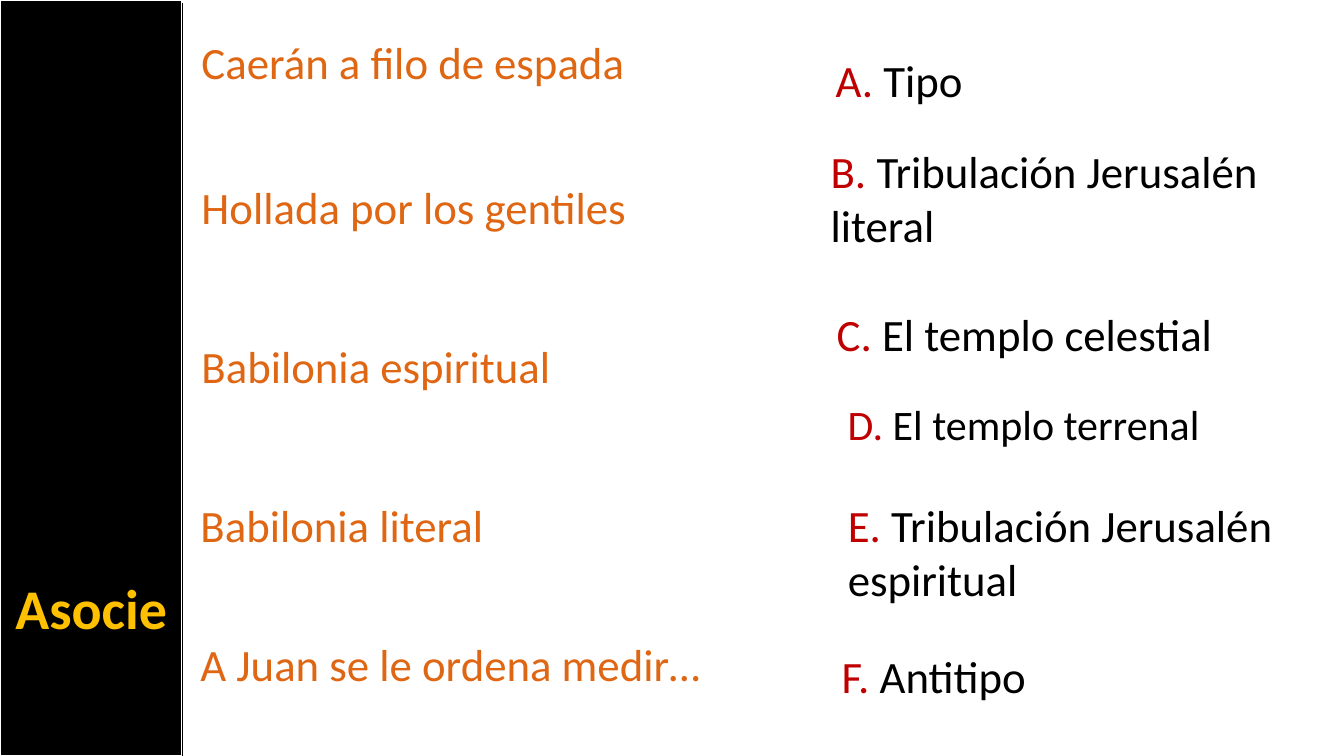
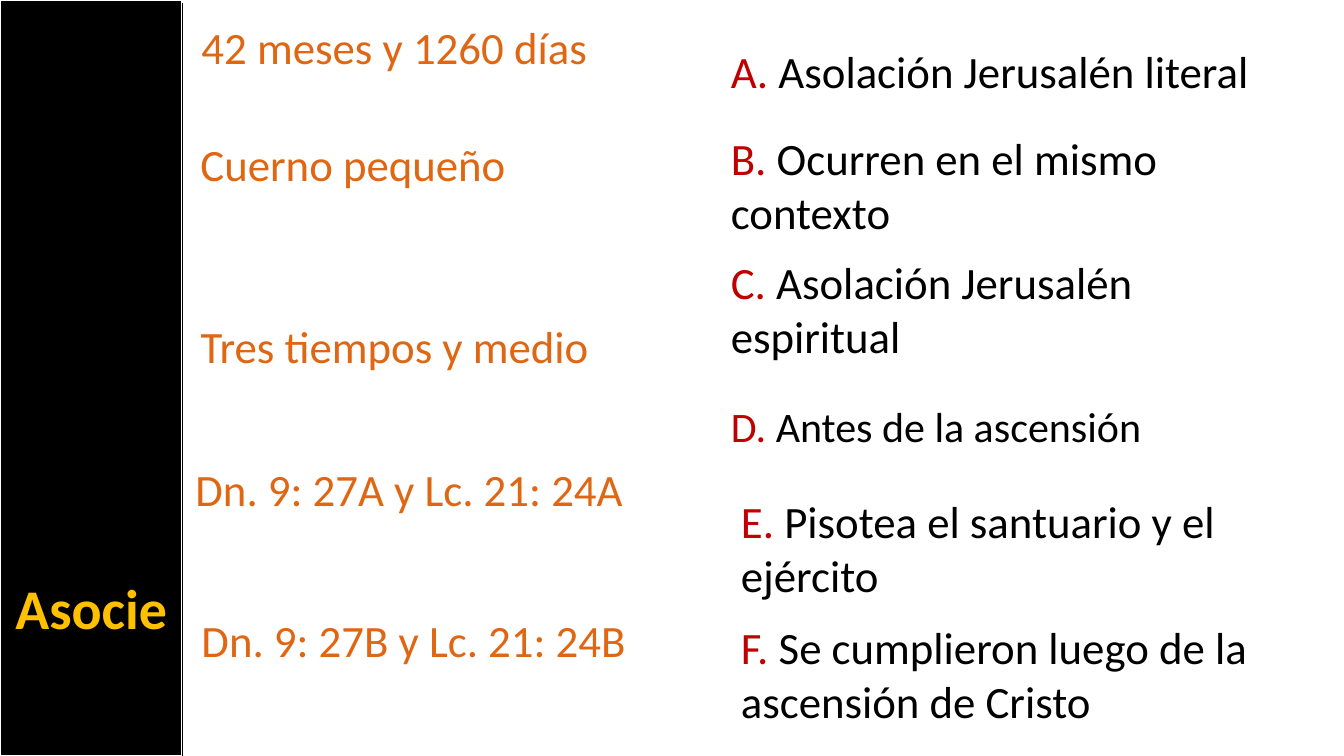
from dataclasses import dataclass

import pptx
import pptx.dml.color
import pptx.enum.shapes
import pptx.enum.text
import pptx.oxml.ns
import pptx.presentation
import pptx.slide
import pptx.util
from lxml import etree
from pptx.util import Inches

COLORS = {
    "band": "000000",
    "band_outline": "FFFFFF",
    "title": "FFC000",
    "prompt": "DF6613",
    "letter": "C00000",
    "answer": "000000",
}
FONT = "Calibri"
SLIDE_WIDTH, SLIDE_HEIGHT = 13.33, 7.5
BAND_WIDTH = 1.81


@dataclass(frozen=True)
class Prompt:
    text: str
    left: float
    top: float
    width: float


@dataclass(frozen=True)
class Answer:
    text: str
    left: float
    top: float
    width: float
    lines: int = 1
    size: int = 32


@dataclass(frozen=True)
class Exercise:
    prompts: list[Prompt]
    answers: list[Answer]  # lettered A, B, C... in order


EXERCISES = [
    Exercise(
        prompts=[
            Prompt("Caerán a filo de espada", 1.9, 0.29, 4.74),
            Prompt("Hollada por los gentiles", 1.9, 1.73, 5.08),
            Prompt("Babilonia espiritual", 1.9, 3.31, 5.08),
            Prompt("Babilonia literal", 1.89, 4.89, 3.67),
            Prompt("A Juan se le ordena medir…", 1.89, 6.27, 5.27),
        ],
        answers=[
            Answer("Tipo", 8.19, 0.47, 4.57),
            Answer("Tribulación Jerusalén literal", 8.14, 1.38, 4.87, lines=2),
            Answer("El templo celestial", 8.2, 2.99, 4.28),
            Answer("El templo terrenal", 8.31, 3.9, 4.17, size=30),
            Answer("Tribulación Jerusalén espiritual", 8.31, 4.89, 4.75, lines=2),
            Answer("Antitipo", 8.25, 6.39, 4.75),
        ],
    ),
    Exercise(
        prompts=[
            Prompt("42 meses y 1260 días", 1.9, 0.15, 4.11),
            Prompt("Cuerno pequeño", 1.89, 1.31, 3.27),
            Prompt("Tres tiempos y medio", 1.89, 3.11, 4.11),
            Prompt("Dn. 9: 27A y Lc. 21: 24A", 1.84, 4.53, 4.66),
            Prompt("Dn. 9: 27B y Lc. 21: 24B", 1.9, 6.03, 4.54),
        ],
        answers=[
            Answer("Asolación Jerusalén literal", 7.15, 0.38, 5.86),
            Answer("Ocurren en el mismo contexto", 7.15, 1.25, 4.78, lines=2),
            Answer("Asolación Jerusalén espiritual", 7.15, 2.48, 5.13, lines=2),
            Answer("Antes de la ascensión", 7.15, 3.92, 5.46, size=30),
            Answer("Pisotea el santuario y el ejército", 7.25, 4.85, 5.28, lines=2),
            Answer("Se cumplieron luego de la ascensión de Cristo", 7.25, 6.1, 5.76, lines=2),
        ],
    ),
]


def rgb(name: str) -> pptx.dml.color.RGBColor:
    return pptx.dml.color.RGBColor.from_string(COLORS[name])


def add_text(slide: pptx.slide.Slide, runs: list[tuple[str, str]], left: float, top: float,
             width: float, size: int = 32, lines: int = 1, bold: bool = False,
             centered: bool = False) -> None:
    """Add a one-paragraph text box; each run is a text and a colour name."""
    height = 0.1 + lines * size * 1.22 / 72
    frame = slide.shapes.add_textbox(
        Inches(left), Inches(top), Inches(width), Inches(height)).text_frame
    frame.word_wrap = True
    frame.auto_size = pptx.enum.text.MSO_AUTO_SIZE.SHAPE_TO_FIT_TEXT
    paragraph = frame.paragraphs[0]
    paragraph.font.name = FONT
    paragraph.font.size = pptx.util.Pt(size)
    paragraph.font.bold = bold
    if centered:
        paragraph.alignment = pptx.enum.text.PP_ALIGN.CENTER
    for text, color in runs:
        run = paragraph.add_run()
        run.text = text
        run.font.color.rgb = rgb(color)


def add_band(slide: pptx.slide.Slide) -> None:
    band = slide.shapes.add_shape(
        pptx.enum.shapes.MSO_SHAPE.RECTANGLE, 0, 0, Inches(BAND_WIDTH), Inches(SLIDE_HEIGHT))
    band.shadow.inherit = False
    band.fill.solid()
    band.fill.fore_color.rgb = rgb("band")
    band.line.color.rgb = rgb("band_outline")
    band.line.width = pptx.util.Pt(1.5)


def add_band_edge(slide: pptx.slide.Slide) -> None:
    edge = slide.shapes.add_connector(
        pptx.enum.shapes.MSO_CONNECTOR.STRAIGHT,
        Inches(BAND_WIDTH), Inches(0.03), Inches(BAND_WIDTH), Inches(SLIDE_HEIGHT))
    edge.line.color.rgb = rgb("band")
    edge.line.width = pptx.util.Pt(1)
    etree.SubElement(edge._element.spPr, pptx.oxml.ns.qn("a:effectLst"))


def add_exercise(deck: pptx.presentation.Presentation, exercise: Exercise) -> None:
    slide = deck.slides.add_slide(deck.slide_layouts[6])
    add_band(slide)

    # Prompts on the left, lettered answers on the right
    for prompt in exercise.prompts:
        add_text(slide, [(prompt.text, "prompt")], prompt.left, prompt.top, prompt.width)
    for letter, answer in zip("ABCDEF", exercise.answers):
        add_text(slide, [(f"{letter}. ", "letter"), (answer.text, "answer")],
                 answer.left, answer.top, answer.width, answer.size, answer.lines)

    # Title on the band, then the band's edge
    add_text(slide, [("Asocie", "title")], 0, 5.64, BAND_WIDTH, size=40, bold=True, centered=True)
    add_band_edge(slide)


def main() -> None:
    deck = pptx.Presentation()
    deck.slide_width = Inches(SLIDE_WIDTH)
    deck.slide_height = Inches(SLIDE_HEIGHT)
    for exercise in EXERCISES:
        add_exercise(deck, exercise)
    deck.save("out.pptx")


if __name__ == "__main__":
    main()
